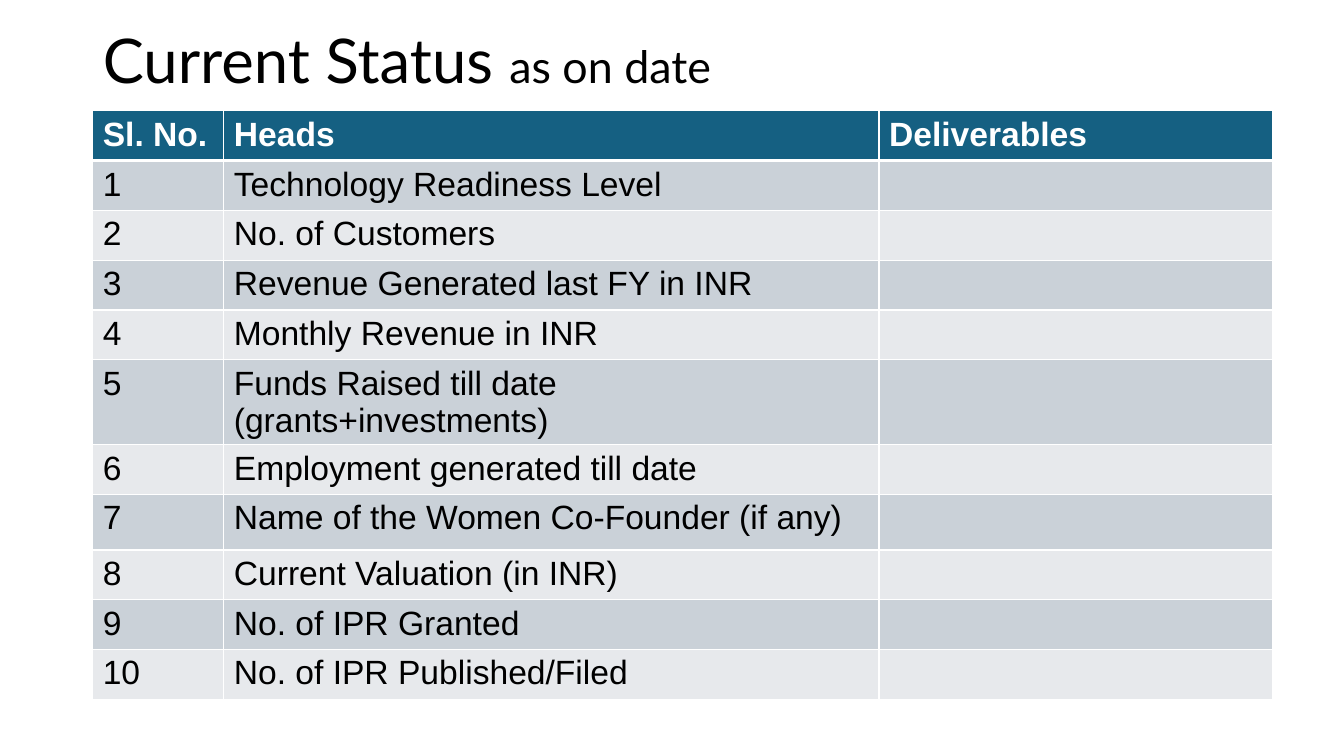
import dataclasses

import lxml.etree
import pptx
import pptx.dml.color
import pptx.enum.text
import pptx.oxml.ns
import pptx.util

GRID = 0.1
LEFT = 9.2
COLS = (13, 65, 39)
HEAD = ("Sl. No.", "Heads", "Deliverables")
BLUE, GREY, PALE = "156082", "CAD1D8", "E7E9EC"
WHITE, BLACK = "FFFFFF", "000000"


@dataclasses.dataclass
class Item:
    label: str
    height: float = 4.94


ITEMS = (
    Item("Technology Readiness Level"),
    Item("No. of Customers"),
    Item("Revenue Generated last FY in INR"),
    Item("Monthly Revenue in INR"),
    Item("Funds Raised till date (grants+investments)", 5.6),
    Item("Employment generated till date"),
    Item("Name of the Women Co-Founder (if any)", 5.5),
    Item("Current Valuation (in INR)"),
    Item("No. of IPR Granted"),
    Item("No. of IPR Published/Filed"),
)


def cells(count: float) -> int:
    return pptx.util.Inches(count * GRID)


def color(code: str) -> pptx.dml.color.RGBColor:
    return pptx.dml.color.RGBColor.from_string(code)


def write(frame, text: str, *, size: float = 24, font: str = "Arial",
          ink: str = BLACK, bold: bool = False) -> None:
    run = frame.paragraphs[0].add_run()
    run.text = text
    run.font.size = pptx.util.Pt(size)
    run.font.name = font
    run.font.bold = bold
    run.font.color.rgb = color(ink)


def border(cell, base: float) -> None:
    props = cell._tc.get_or_add_tcPr()
    name = pptx.oxml.ns.qn
    for side, width in (("L", 1), ("R", 1), ("T", 1), ("B", base)):
        line = lxml.etree.SubElement(props, name(f"a:ln{side}"), w=str(pptx.util.Pt(width)))
        fill = lxml.etree.SubElement(line, name("a:solidFill"))
        lxml.etree.SubElement(fill, name("a:srgbClr"), val=WHITE)


def add_title(slide) -> None:
    title = slide.shapes.title
    title.left, title.top = cells(LEFT), cells(-0.9)
    title.width, title.height = cells(115), cells(14.5)
    frame = title.text_frame
    frame.auto_size = pptx.enum.text.MSO_AUTO_SIZE.NONE
    frame.vertical_anchor = pptx.enum.text.MSO_ANCHOR.MIDDLE
    frame.word_wrap = True
    frame.paragraphs[0].alignment = pptx.enum.text.PP_ALIGN.LEFT
    frame.paragraphs[0].line_spacing = 0.9
    write(frame, "Current Status ", size=44, font="Lato")
    write(frame, "as on date", size=32, font="Lato")


def add_grid(slide) -> None:
    rows = [HEAD] + [(str(num), item.label, "") for num, item in enumerate(ITEMS, 1)]
    sizes = [Item.height] + [item.height for item in ITEMS]
    table = slide.shapes.add_table(len(rows), len(COLS), cells(LEFT), cells(11),
                                   cells(sum(COLS)), cells(sum(sizes))).table
    for col, width in zip(table.columns, COLS):
        col.width = cells(width)
    for index, (row, height, texts) in enumerate(zip(table.rows, sizes, rows)):
        row.height = cells(height)
        head = index == 0
        back = BLUE if head else GREY if index % 2 else PALE
        for cell, text in zip(row.cells, texts):
            border(cell, 3 if head else 1)
            cell.fill.solid()
            cell.fill.fore_color.rgb = color(back)
            if text:
                write(cell.text_frame, text, ink=WHITE if head else BLACK, bold=head)


def main() -> None:
    deck = pptx.Presentation()
    deck.slide_width, deck.slide_height = cells(133.33), cells(75)
    slide = deck.slides.add_slide(deck.slide_layouts[5])
    add_title(slide)
    add_grid(slide)
    deck.save("out.pptx")


if __name__ == "__main__":
    main()
